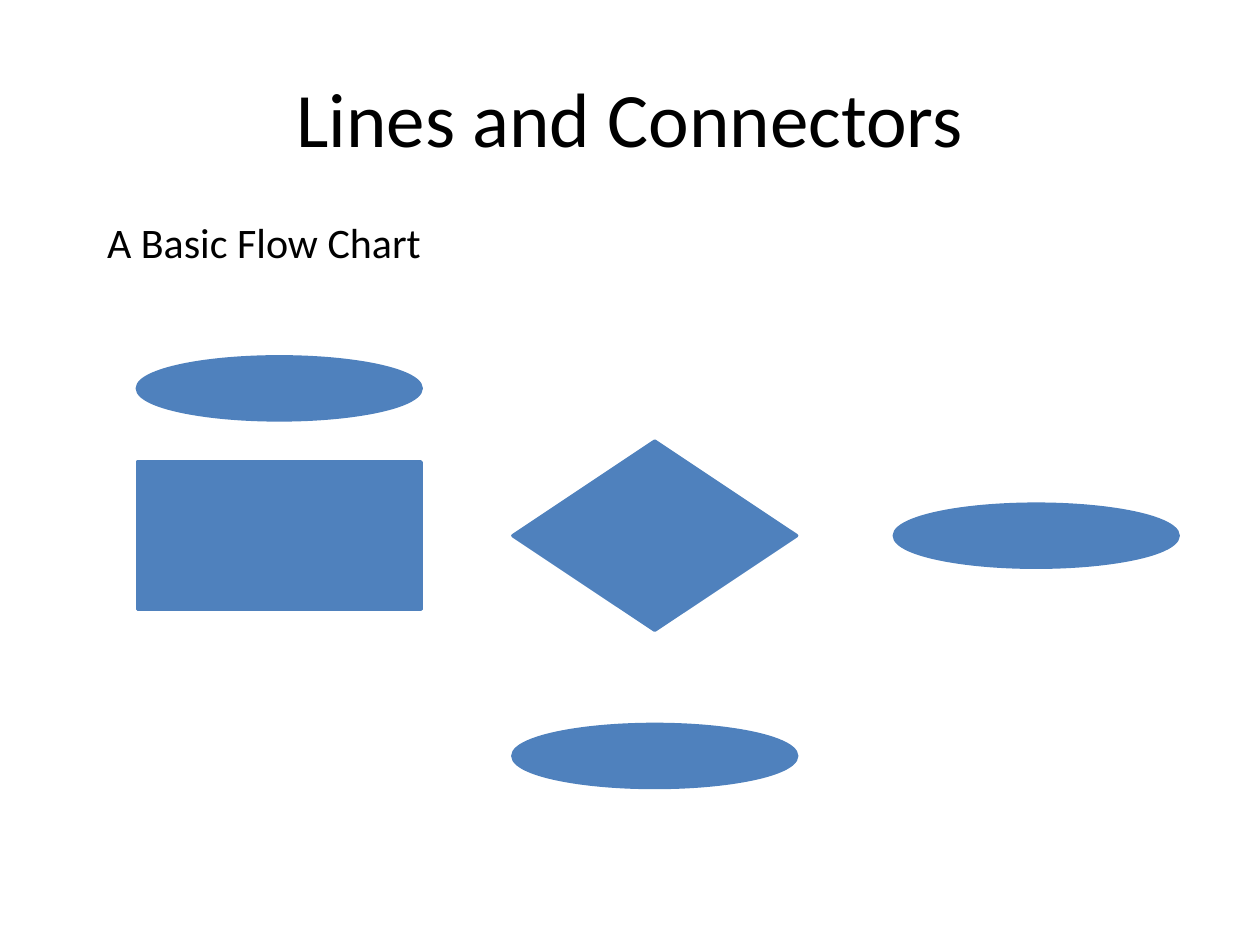
from dataclasses import dataclass

import pptx
import pptx.dml.color
import pptx.enum.shapes
import pptx.enum.text
import pptx.slide
import pptx.util

Cm = pptx.util.Cm
Pt = pptx.util.Pt
ShapeKind = pptx.enum.shapes.MSO_SHAPE
Align = pptx.enum.text.PP_ALIGN
Anchor = pptx.enum.text.MSO_ANCHOR

BLUE = pptx.dml.color.RGBColor(0x4F, 0x81, 0xBD)
BLACK = pptx.dml.color.RGBColor(0, 0, 0)
FONT = "Calibri"

STEP_WIDTH = 5.72
TERMINATOR_HEIGHT = 1.27
LEFT_COLUMN, MIDDLE_COLUMN, RIGHT_COLUMN = 5.63, 13.2, 20.89
TOP_ROW, MAIN_ROW, BOTTOM_ROW = 7.83, 10.8, 15.24


@dataclass(frozen=True)
class Step:
    kind: pptx.enum.shapes.MSO_SHAPE
    center_x: float
    center_y: float
    height: float = TERMINATOR_HEIGHT


@dataclass(frozen=True)
class Label:
    text: str
    left: float
    top: float
    width: float
    height: float
    size: int
    align: Align
    anchor: Anchor
    wrap: bool


STEPS = [
    Step(ShapeKind.OVAL, LEFT_COLUMN, TOP_ROW),
    Step(ShapeKind.RECTANGLE, LEFT_COLUMN, MAIN_ROW, 2.97),
    Step(ShapeKind.FLOWCHART_DECISION, MIDDLE_COLUMN, MAIN_ROW, 3.81),
    Step(ShapeKind.OVAL, MIDDLE_COLUMN, BOTTOM_ROW),
    Step(ShapeKind.OVAL, RIGHT_COLUMN, MAIN_ROW),
]

LABELS = [
    Label("Lines and Connectors", 1.27, 0.76, 22.86, 3.18, 44,
          Align.CENTER, Anchor.MIDDLE, True),
    Label("A Basic Flow Chart", 1.91, 4.23, 6.88, 1.27, 24,
          Align.LEFT, Anchor.TOP, False),
]


def draw_step(page: pptx.slide.Slide, step: Step) -> None:
    shape = page.shapes.add_shape(
        step.kind,
        Cm(step.center_x - STEP_WIDTH / 2),
        Cm(step.center_y - step.height / 2),
        Cm(STEP_WIDTH),
        Cm(step.height),
    )
    shape.shadow.inherit = False
    shape.fill.solid()
    shape.fill.fore_color.rgb = BLUE
    shape.line.color.rgb = BLUE
    shape.line.width = Pt(2)


def draw_label(page: pptx.slide.Slide, label: Label) -> None:
    box = page.shapes.add_textbox(
        Cm(label.left), Cm(label.top), Cm(label.width), Cm(label.height)
    )
    frame = box.text_frame
    frame.word_wrap = label.wrap
    frame.vertical_anchor = label.anchor
    if not label.wrap:
        frame.auto_size = pptx.enum.text.MSO_AUTO_SIZE.SHAPE_TO_FIT_TEXT
    paragraph = frame.paragraphs[0]
    paragraph.text = label.text
    paragraph.alignment = label.align
    paragraph.font.name = FONT
    paragraph.font.size = Pt(label.size)
    paragraph.font.color.rgb = BLACK


def main() -> None:
    deck = pptx.Presentation()
    deck.slide_width = Cm(25.4)
    deck.slide_height = Cm(19.05)
    page = deck.slides.add_slide(deck.slide_layouts[6])
    for step in STEPS:
        draw_step(page, step)
    for label in LABELS:
        draw_label(page, label)
    deck.save("out.pptx")


if __name__ == "__main__":
    main()
